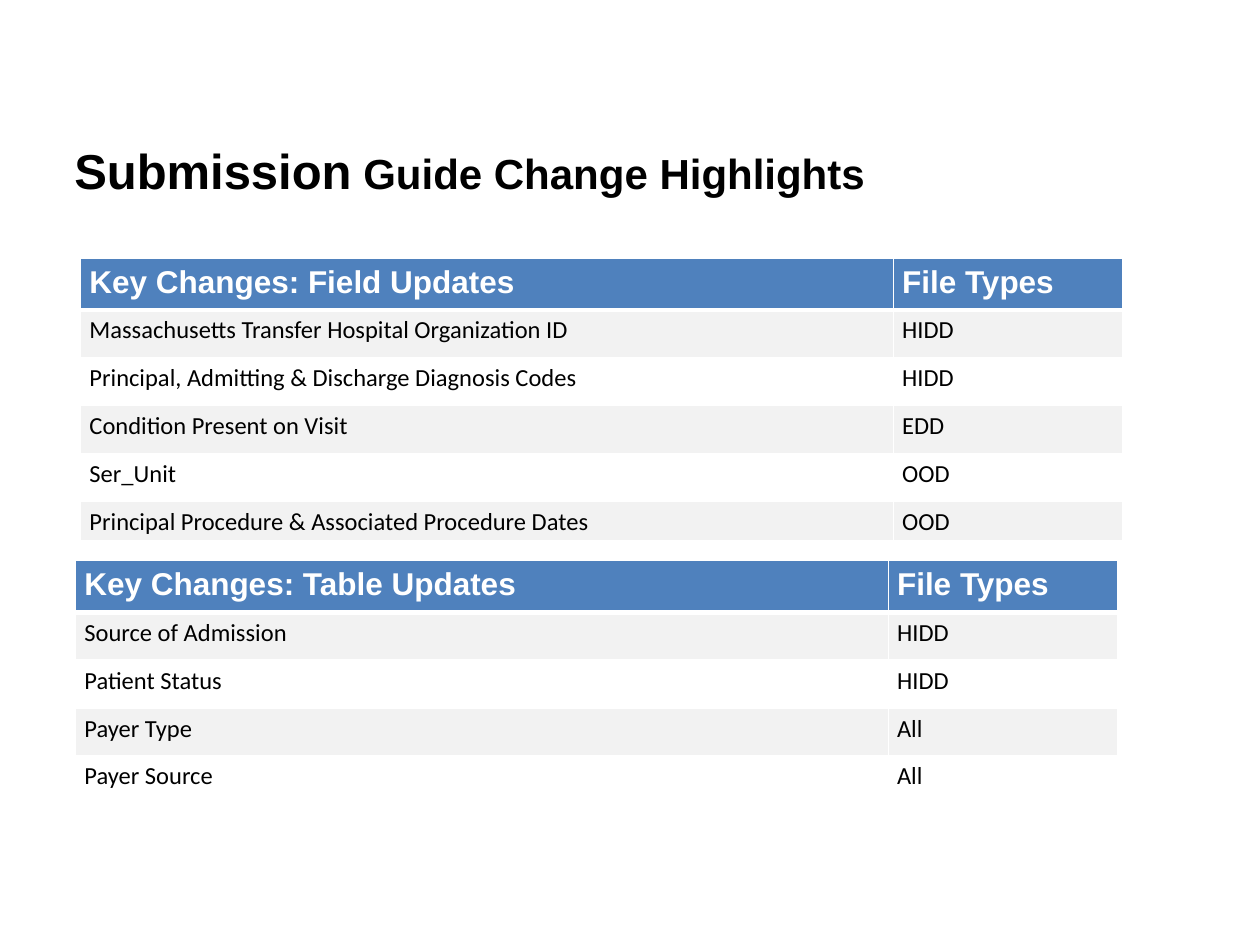
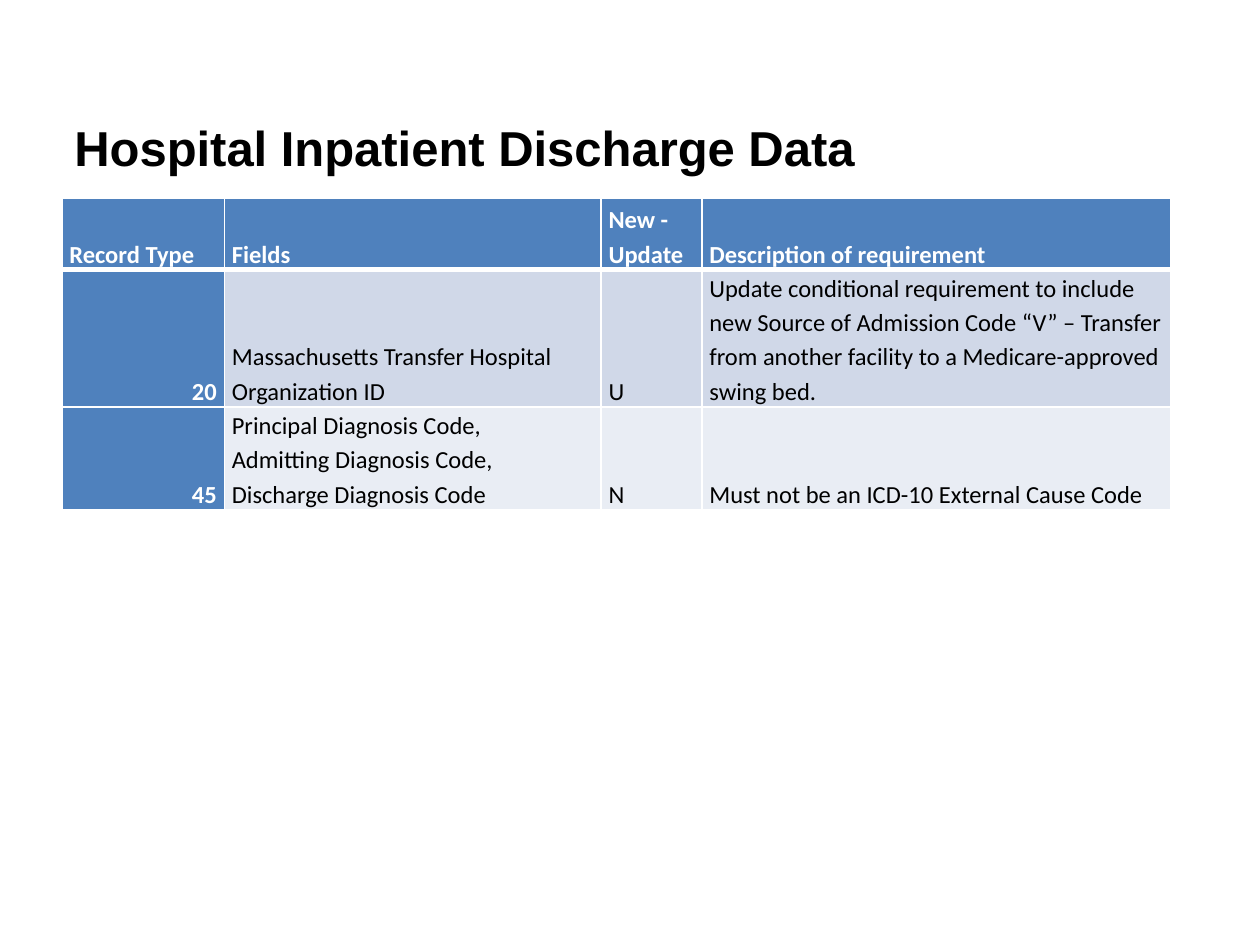
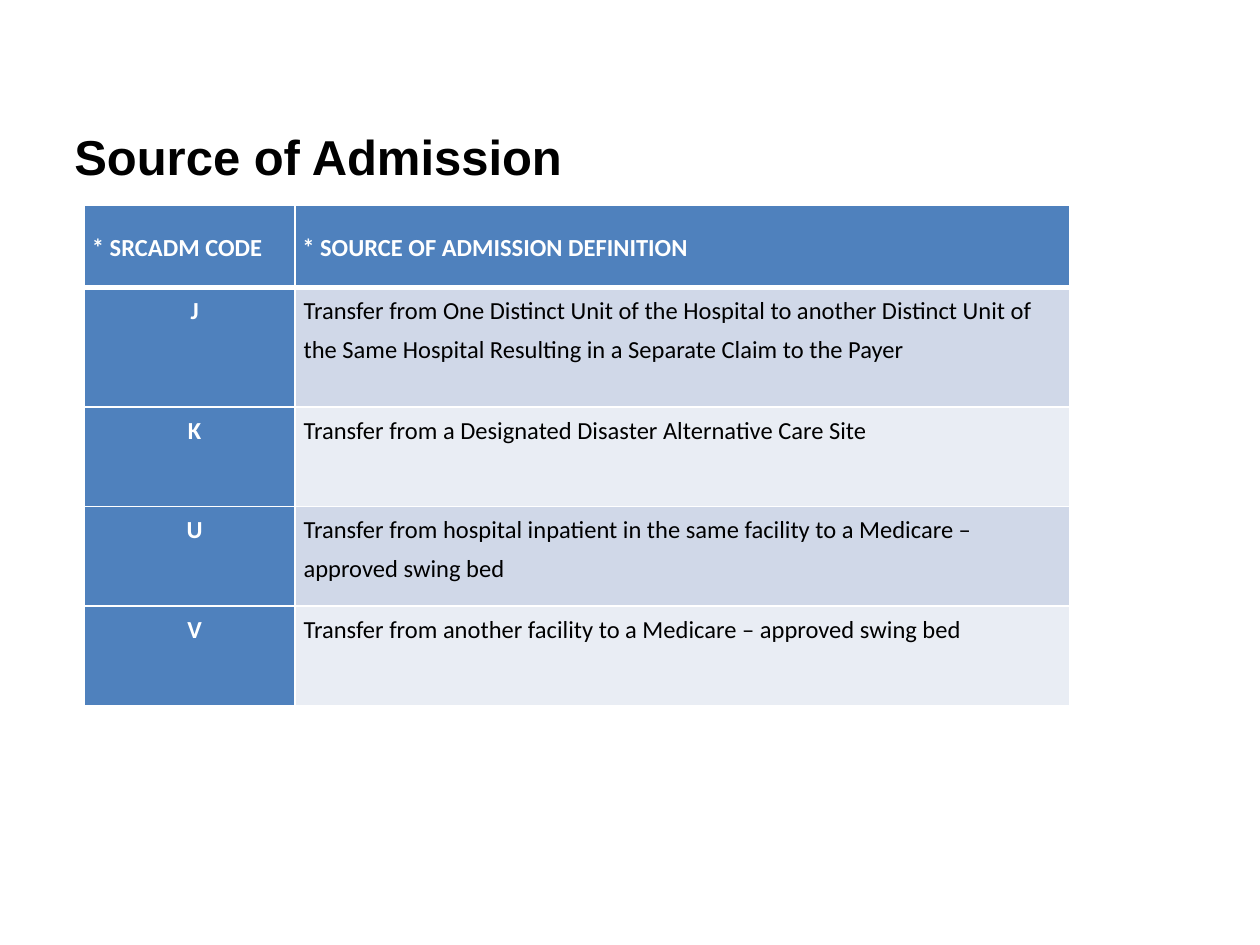
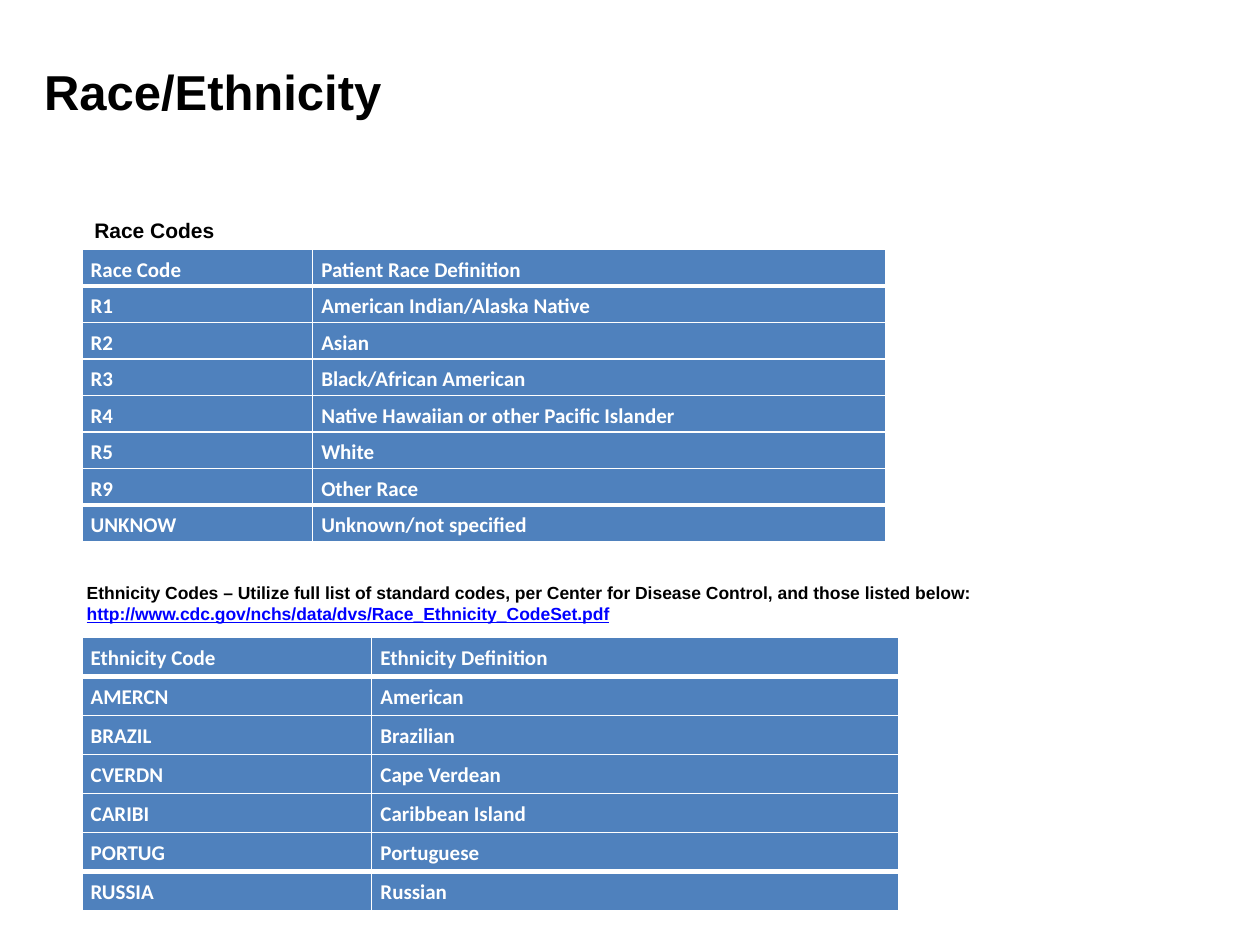
from lxml.etree import SubElement
from pptx import Presentation
from pptx.dml.color import RGBColor
from pptx.enum.text import MSO_ANCHOR, MSO_AUTO_SIZE, PP_ALIGN
from pptx.oxml.ns import qn
from pptx.util import Inches, Pt

# Shared look
BLUE, WHITE, BLACK, LINK = "4F81BD", "FFFFFF", "000000", "0000FF"
GREY, DARK, PALE = "F2F2F2", "D0D8E8", "E9EDF4"
TOP, MID, LOW = MSO_ANCHOR.TOP, MSO_ANCHOR.MIDDLE, MSO_ANCHOR.BOTTOM
hue = RGBColor.from_string


def write(box, text, size=14, font="Calibri", color=BLACK, bold=False, under=None,
          align=PP_ALIGN.LEFT, line=None, after=0, anchor=TOP, pad=None):
    """Append formatted text to the first paragraph of a cell or text frame."""
    para = getattr(box, "text_frame", box).paragraphs[0]
    para.alignment, para.space_after = align, Pt(after)
    if line:
        para.line_spacing = line
    box.vertical_anchor = anchor
    if pad:
        (box.margin_left, box.margin_top,
         box.margin_right, box.margin_bottom) = map(Inches, pad)
    for i, part in enumerate(text.split("\n")):
        if i:
            para.add_line_break()
        run = para.add_run()
        run.text = part
        run.font.size, run.font.name = Pt(size), font
        run.font.bold, run.font.underline = bold, under
        run.font.color.rgb = hue(color)


def grid(slide, left, top, cols, highs, rows, head, body, code=None,
         bands=(BLUE, BLUE), foot=False):
    """Add a table; code formats a blue first column, foot sets off the last row."""
    table = slide.shapes.add_table(
        len(rows), len(cols), Inches(left), Inches(top),
        Inches(sum(cols)), Inches(sum(highs))).table
    table.horz_banding = False
    for col, wide in zip(table.columns, cols):
        col.width = Inches(wide)
    thick = {1, len(rows) - 1} if foot else {1}
    for r, row in enumerate(rows):
        table.rows[r].height = Inches(highs[r])
        for c, text in enumerate(row):
            cell = table.cell(r, c)
            first = code and c == 0
            look = head if r == 0 else code if first else body
            write(cell, text, **look)
            # White borders, heavier under the header
            props = cell._tc.get_or_add_tcPr()
            wide = {"L": 1, "R": 1, "T": 3 if r in thick else 1,
                    "B": 3 if r + 1 in thick else 1}
            for side, points in wide.items():
                edge = SubElement(props, qn("a:ln" + side), w=str(Pt(points)))
                paint = SubElement(edge, qn("a:solidFill"))
                SubElement(paint, qn("a:srgbClr"), val=WHITE)
            tint = BLUE if r == 0 or first else bands[(r - 1) % 2]
            if tint:
                cell.fill.solid()
                cell.fill.fore_color.rgb = hue(tint)
            else:
                cell.fill.background()


# Slides and titles
deck = Presentation()
deck.slide_width, deck.slide_height = Inches(10), Inches(7.5)
titles = [
    ((0.49, 1.17, 8.38, 0.35), MID, [("Submission", 28), (" Guide Change Highlights", 24)]),
    ((0.49, 0.66, 8.79, 1.02), MID, [("Hospital Inpatient Discharge Data", 28)]),
    ((0.49, 1, 8.79, 0.77), TOP, [("Source of Admission", 28)]),
    ((0.25, 0.37, 8.79, 0.7), MID, [("Race/Ethnicity", 28)]),
]
pages = []
for spot, anchor, parts in titles:
    page = deck.slides.add_slide(deck.slide_layouts[5])
    title = page.shapes.title
    title.left, title.top, title.width, title.height = map(Inches, spot)
    frame = title.text_frame
    frame.auto_size = MSO_AUTO_SIZE.NONE
    pad = (0.1, 0 if anchor == TOP else 0.05, 0.1, 0.05)
    for text, size in parts:
        write(frame, text, size=size, font="Arial", bold=True, anchor=anchor, pad=pad)
    pages.append(page)
guide, fields, source, race = pages

# Slide 1: change highlights
body = dict(line=1.15, after=10, pad=(0.07, 0.01, 0.07, 0))
head = dict(body, size=18, font="Arial", color=WHITE, bold=True)
tables = [
    (0.6, 4.45, 0.29, [
        ("Key Changes: Table Updates", "File Types"),
        ("Source of Admission", "HIDD"),
        ("Patient Status", "HIDD"),
        ("Payer Type", "All"),
        ("Payer Source", "All")]),
    (0.64, 2.05, 0.31, [
        ("Key Changes: Field Updates", "File Types"),
        ("Massachusetts Transfer Hospital Organization ID", "HIDD"),
        ("Principal, Admitting & Discharge Diagnosis Codes", "HIDD"),
        ("Condition Present on Visit", "EDD"),
        ("Ser_Unit", "OOD"),
        ("Principal Procedure & Associated Procedure Dates", "OOD")]),
]
for left, top, last, rows in tables:
    highs = [0.41] + [0.38] * (len(rows) - 2) + [last]
    grid(guide, left, top, [6.45, 1.82], highs, rows, head, body, bands=(GREY, None))

# Slide 2: inpatient fields
body = dict(line=1.15, anchor=LOW, pad=(0.06, 0, 0.06, 0))
head = dict(body, color=WHITE, bold=True)
rows = [
    ("Record Type", "Fields", "New - Update", "Description of requirement"),
    ("20", "Massachusetts Transfer Hospital Organization ID", "U",
     "Update conditional requirement to include new Source of Admission Code “V” – "
     "Transfer from another facility to a Medicare-approved swing bed."),
    ("45", "Principal Diagnosis Code,\nAdmitting Diagnosis Code,\nDischarge Diagnosis Code",
     "N", "Must not be an ICD-10 External Cause Code"),
]
grid(fields, 0.49, 1.57, [1.29, 2.99, 0.8, 3.72], [0.57, 0.86, 0.57], rows, head, body,
     code=dict(head, align=PP_ALIGN.RIGHT), bands=(DARK, PALE))

# Slide 3: admission codes
head = dict(head, anchor=MID)
body = dict(line=1.3, after=3, pad=(0.07, 0, 0.07, 0))
code = dict(body, color=WHITE, bold=True, align=PP_ALIGN.CENTER, pad=(0.15, 0, 0.07, 0))
rows = [
    ("* SRCADM CODE", "* SOURCE OF ADMISSION DEFINITION"),
    ("J", "Transfer from One Distinct Unit of the Hospital to another Distinct Unit of "
          "the Same Hospital Resulting in a Separate Claim to the Payer"),
    ("K", "Transfer from a Designated Disaster Alternative Care Site"),
    ("U", "Transfer from hospital inpatient in the same facility to a Medicare – "
          "approved swing bed"),
    ("V", "Transfer from another facility to a Medicare – approved swing bed"),
]
grid(source, 0.67, 1.63, [1.67, 6.15], [0.65, 0.95] + [0.79] * 3, rows, head, body,
     code=code, bands=(DARK, PALE))

# Slide 4: race and ethnicity codes
look = dict(body, size=12, color=WHITE, bold=True)
races = [
    ("Race Code", "Patient Race Definition"),
    ("R1", "American Indian/Alaska Native"),
    ("R2", "Asian"),
    ("R3", "Black/African American"),
    ("R4", "Native Hawaiian or other Pacific Islander"),
    ("R5", "White"),
    ("R9", "Other Race"),
    ("UNKNOW", "Unknown/not specified"),
]
groups = [
    ("Ethnicity Code", "Ethnicity Definition"),
    ("AMERCN", "American"),
    ("BRAZIL", "Brazilian"),
    ("CVERDN", "Cape Verdean"),
    ("CARIBI", "Caribbean Island"),
    ("PORTUG", "Portuguese"),
    ("RUSSIA", "Russian"),
]
for top, cols, high, rows in [(1.98, [1.83, 4.55], 0.29, races),
                              (5.06, [2.3, 4.18], 0.31, groups)]:
    grid(race, 0.65, top, cols, [high] * len(rows), rows, look, look, foot=True)

# Table captions
notes = [
    ((0.59, 4.57, 9.3, 0.74), 10, [
        ("Ethnicity Codes – Utilize full list of standard codes, per Center for Disease "
         "Control, and those listed below: ", {}),
        ("http://www.cdc.gov/nchs/data/dvs/Race_Ethnicity_CodeSet.pdf",
         dict(color=LINK, under=True))]),
    ((0.65, 1.68, 4.64, 0.3), 12, [("Race Codes", {})]),
]
for spot, size, parts in notes:
    frame = race.shapes.add_textbox(*map(Inches, spot)).text_frame
    frame.word_wrap = True
    for text, extra in parts:
        write(frame, text, size=size, font="Arial", bold=True, **extra)

deck.save("out.pptx")
